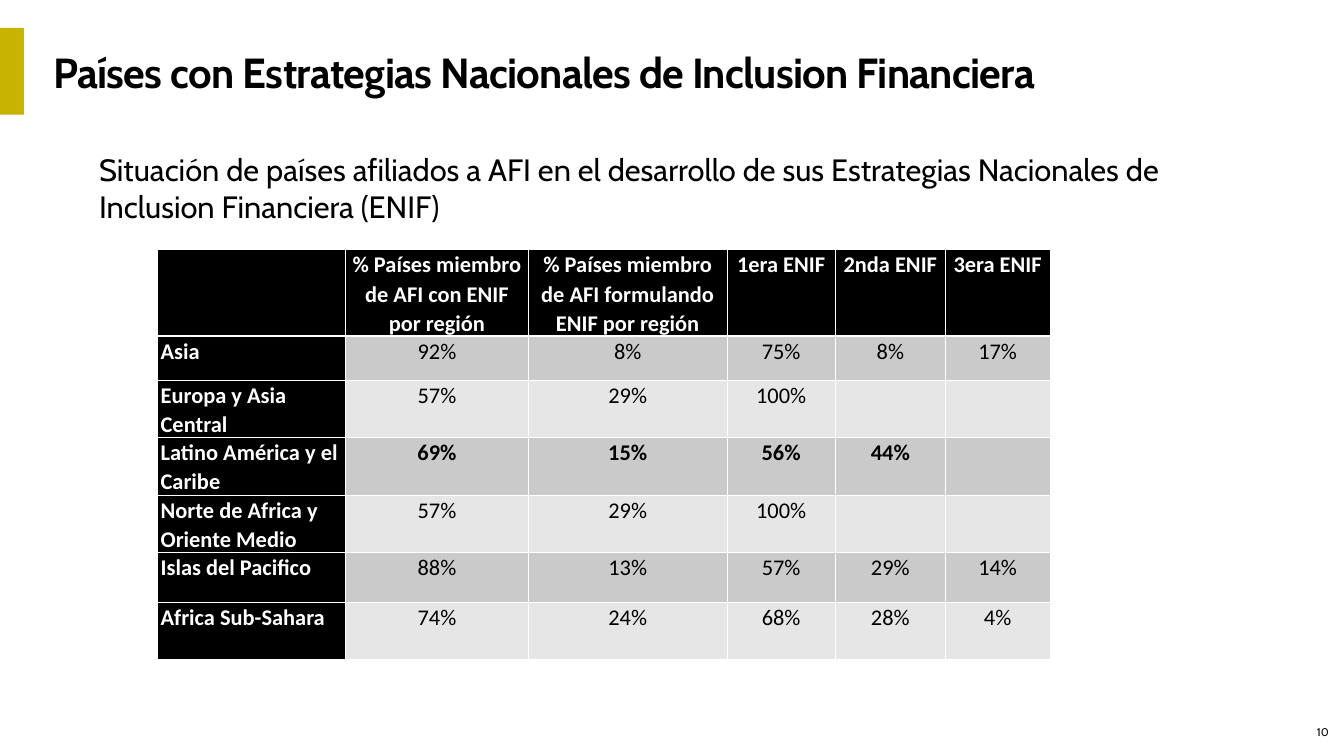
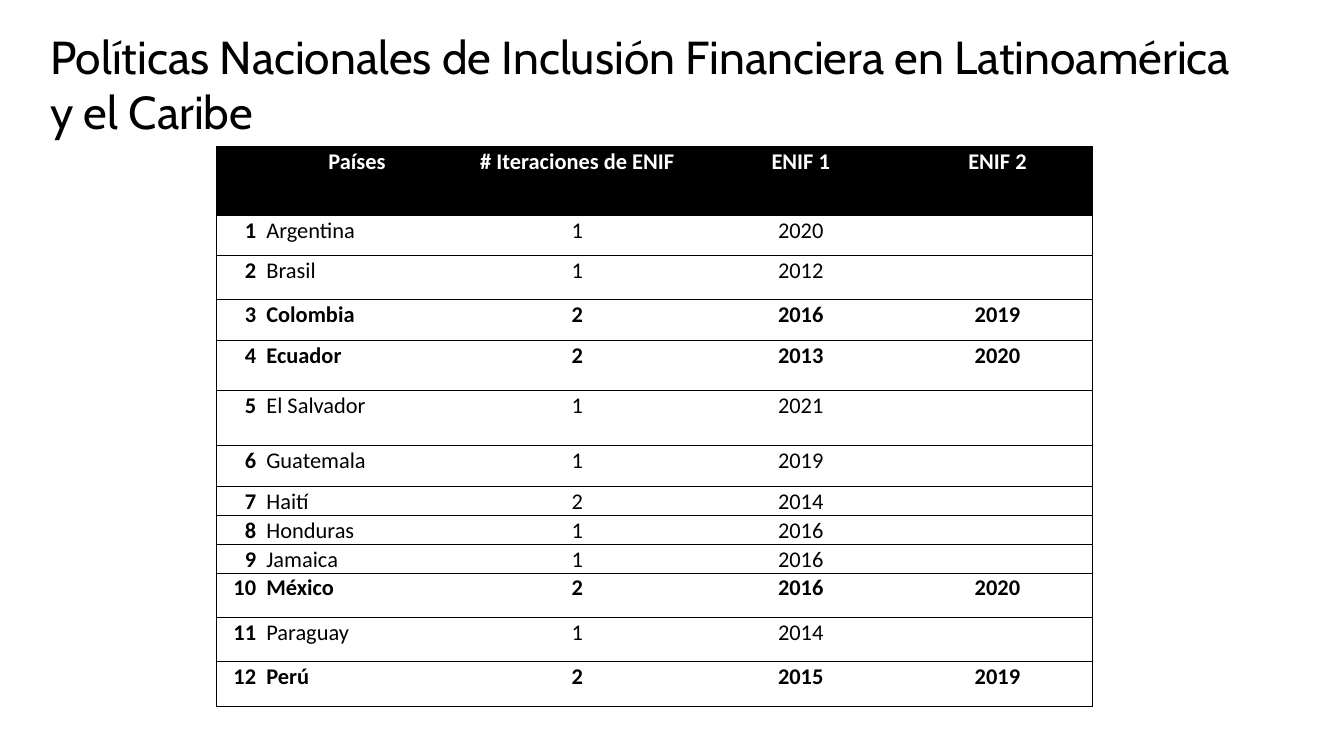
import pptx
import pptx.util
import pptx.dml.color
import pptx.enum.shapes
import pptx.enum.text
import pptx.oxml.ns
import lxml.etree

Pt = pptx.util.Pt
ALIGN = pptx.enum.text.PP_ALIGN
ANCHOR = pptx.enum.text.MSO_ANCHOR
COLORS = {
    "black": "000000",
    "white": "FFFFFF",
    "accent": "C7B300",
    "band_dark": "CACACA",
    "band_light": "E6E6E6",
}
TITLE_FONT = "Cabin"
TABLE_FONT = "Calibri"
TABLE_SIZE = 32

REGION_HEADER = ["", "% Países miembro de AFI con ENIF por región",
                 "% Países miembro de AFI formulando ENIF por región",
                 "1era ENIF", "2nda ENIF", "3era ENIF"]
REGIONS = [
    ["Asia", "92%", "8%", "75%", "8%", "17%"],
    ["Europa y Asia Central", "57%", "29%", "100%", "", ""],
    ["Latino América y el Caribe", "69%", "15%", "56%", "44%", ""],
    ["Norte de Africa y Oriente Medio", "57%", "29%", "100%", "", ""],
    ["Islas del Pacifico", "88%", "13%", "57%", "29%", "14%"],
    ["Africa Sub-Sahara", "74%", "24%", "68%", "28%", "4%"],
]
HIGHLIGHTED_REGION = "Latino América y el Caribe"
REGION_WIDTHS = [269, 261.5, 283.5, 155, 157, 149.5]
REGION_HEIGHTS = [114, 63, 58, 76, 82, 71, 82]

COUNTRY_HEADER = ["", "Países", "# Iteraciones de ENIF", "ENIF 1", "ENIF 2"]
COUNTRIES = [
    ["Argentina", "1", "2020", ""],
    ["Brasil", "1", "2012", ""],
    ["Colombia", "2", "2016", "2019"],
    ["Ecuador", "2", "2013", "2020"],
    ["El Salvador", "1", "2021", ""],
    ["Guatemala", "1", "2019", ""],
    ["Haití", "2", "2014", ""],
    ["Honduras", "1", "2016", ""],
    ["Jamaica", "1", "2016", ""],
    ["México", "2", "2016", "2020"],
    ["Paraguay", "1", "2014", ""],
    ["Perú", "2", "2015", "2019"],
]
COUNTRY_WIDTHS = [60.5, 281, 348.5, 290, 272]
COUNTRY_HEIGHTS = [98, 57.5, 62.5, 58.5, 72, 79, 58.5, 41, 41, 41] + [63.5] * 3


def rgb(name):
    return pptx.dml.color.RGBColor.from_string(COLORS[name])


def format_run(run, font, size, color, bold):
    run.font.name = font
    run.font.size = Pt(size)
    run.font.bold = bold
    run.font.color.rgb = rgb(color)


def add_text(slide, box, text, size, bold=False, align=ALIGN.LEFT, insets=(9.5, 9.5),
             wrap=True, grow=True, anchor=ANCHOR.TOP, line_spacing=None, tracking=None):
    shape = slide.shapes.add_textbox(*map(Pt, box))
    frame = shape.text_frame
    frame.text = text
    frame.word_wrap = wrap
    frame.vertical_anchor = anchor
    fit = pptx.enum.text.MSO_AUTO_SIZE
    frame.auto_size = fit.SHAPE_TO_FIT_TEXT if grow else fit.NONE
    frame.margin_left = frame.margin_right = Pt(insets[0])
    frame.margin_top = frame.margin_bottom = Pt(insets[1])
    paragraph = frame.paragraphs[0]
    paragraph.alignment = align
    if line_spacing:
        paragraph.line_spacing = line_spacing
    for run in paragraph.runs:
        format_run(run, TITLE_FONT, size, "black", bold)
        if tracking:
            run.font._element.set("spc", str(tracking * 100))


def add_accent_bar(slide, box):
    bar = slide.shapes.add_shape(pptx.enum.shapes.MSO_SHAPE.RECTANGLE, *map(Pt, box))
    bar.shadow.inherit = False
    bar.fill.solid()
    bar.fill.fore_color.rgb = rgb("accent")
    bar.line.fill.background()


def set_borders(cell, borders):
    properties = cell._tc.get_or_add_tcPr()
    for position, side in enumerate("LRTB"):
        color, width = borders.get(side, (None, 0))
        line = lxml.etree.Element(pptx.oxml.ns.qn("a:ln" + side), w=str(int(Pt(width))))
        if color:
            fill = lxml.etree.SubElement(line, pptx.oxml.ns.qn("a:solidFill"))
            lxml.etree.SubElement(fill, pptx.oxml.ns.qn("a:srgbClr"), val=COLORS[color])
        else:
            lxml.etree.SubElement(line, pptx.oxml.ns.qn("a:noFill"))
        properties.insert(position, line)


def add_grid(slide, left, top, widths, heights):
    frame = slide.shapes.add_table(len(heights), len(widths), Pt(left), Pt(top),
                                   Pt(sum(widths)), Pt(sum(heights)))
    table = frame.table
    table.horz_banding = False
    for column, width in zip(table.columns, widths):
        column.width = Pt(width)
    for row, height in zip(table.rows, heights):
        row.height = Pt(height)
    return table


def fill_cell(cell, text, fill, color, bold, align, margins, borders, space_after=8):
    if fill:
        cell.fill.solid()
        cell.fill.fore_color.rgb = rgb(fill)
    else:
        cell.fill.background()
    set_borders(cell, borders)
    if not text:
        return
    cell.margin_left, cell.margin_right = map(Pt, margins)
    cell.margin_top = cell.margin_bottom = 0
    paragraph = cell.text_frame.paragraphs[0]
    paragraph.text = text
    paragraph.alignment = align
    paragraph.line_spacing = 1.07
    paragraph.space_after = Pt(space_after)
    for run in paragraph.runs:
        format_run(run, TABLE_FONT, TABLE_SIZE, color, bold)


def add_region_table(slide, left, top):
    table = add_grid(slide, left, top, REGION_WIDTHS, REGION_HEIGHTS)
    for i, row in enumerate([REGION_HEADER] + REGIONS):
        band = "band_dark" if i % 2 else "band_light"
        for j, text in enumerate(row):
            heading = i == 0 or j == 0
            borders = {side: ("white", 1) for side in "LRTB"}
            if i == 0:
                borders["B"] = ("white", 3)
            elif i == 1:
                borders["T"] = ("white", 3)
            fill_cell(
                table.cell(i, j), text,
                fill="black" if heading else band,
                color="white" if heading else "black",
                bold=heading or row[0] == HIGHLIGHTED_REGION,
                align=ALIGN.LEFT if j == 0 else ALIGN.CENTER,
                margins=(5, 5), borders=borders,
                space_after=6 if i == 0 else 8)


def add_country_table(slide, left, top):
    table = add_grid(slide, left, top, COUNTRY_WIDTHS, COUNTRY_HEIGHTS)
    numbered = [[str(number)] + country for number, country in enumerate(COUNTRIES, 1)]
    last = len(COUNTRY_HEADER) - 1
    for i, row in enumerate([COUNTRY_HEADER] + numbered):
        header = i == 0
        has_second_strategy = bool(row[last])
        for j, text in enumerate(row):
            borders = {side: ("black", 0.75) for side in "TB"}
            if header or j == 0:
                borders["L"] = ("black", 0.75)
            if header or j == last:
                borders["R"] = ("black", 0.75)
            align = ALIGN.CENTER
            if not header:
                align = {0: ALIGN.RIGHT, 1: ALIGN.LEFT}.get(j, ALIGN.CENTER)
            fill_cell(
                table.cell(i, j), text,
                fill="black" if header else None,
                color="white" if header else "black",
                bold=header or j == 0 or has_second_strategy,
                align=align,
                margins=(11 if align == ALIGN.LEFT else 3.5, 3.5),
                borders=borders)


def build_regions_slide(slide, left, top):
    add_text(slide, (left + 1864, top + 1026, 44, 38), "10", 16,
             align=ALIGN.RIGHT, grow=False)
    add_accent_bar(slide, (left, top + 40, 34, 124))
    add_text(slide, (left + 67, top + 77, 1576, 71),
             "Países con Estrategias Nacionales de Inclusion Financiera", 60,
             bold=True, line_spacing=0.7, tracking=-1)
    add_text(slide, (left + 134.5, top + 211.5, 1637, 114),
             "Situación de países afiliados a AFI en el desarrollo de sus "
             "Estrategias Nacionales de Inclusion Financiera (ENIF)", 44,
             insets=(7.2, 3.6))
    add_region_table(slide, left + 224.5, top + 356.5)


def build_countries_slide(slide, left, top):
    add_text(slide, (left + 71.5, top + 29, 1728, 180),
             "Políticas Nacionales de Inclusión Financiera en Latinoamérica y el Caribe",
             66, insets=(0, 0), grow=False, anchor=ANCHOR.MIDDLE)
    add_country_table(slide, left + 309, top + 209)


def main():
    presentation = pptx.Presentation()
    presentation.slide_width = Pt(1920)
    presentation.slide_height = Pt(1080)
    blank = presentation.slide_layouts[6]
    for build in (build_regions_slide, build_countries_slide):
        build(presentation.slides.add_slide(blank), 0, 0)
    presentation.save("out.pptx")


if __name__ == "__main__":
    main()
